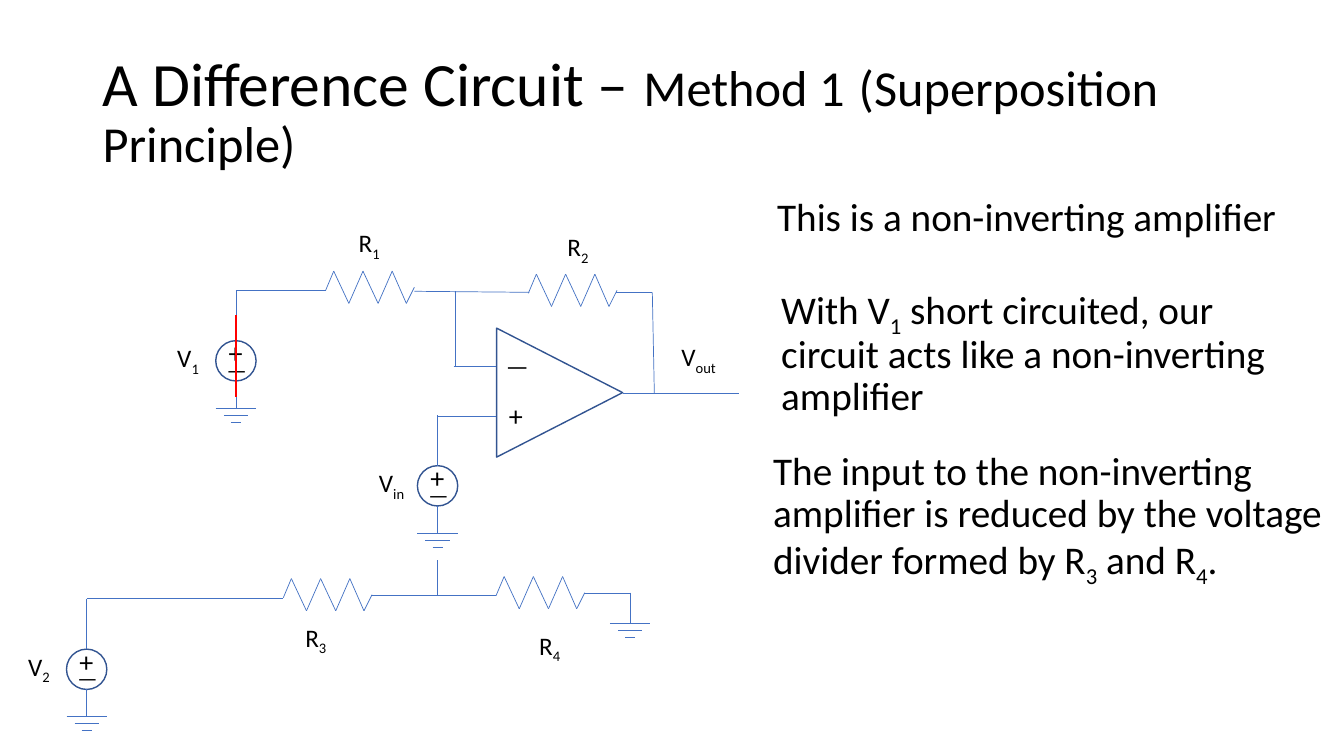
from itertools import pairwise

from lxml.etree import SubElement
from pptx import Presentation
from pptx.dml.color import RGBColor
from pptx.enum.shapes import MSO_CONNECTOR, MSO_SHAPE
from pptx.enum.text import MSO_ANCHOR, MSO_AUTO_SIZE, PP_ALIGN
from pptx.oxml.ns import qn
from pptx.util import Emu, Pt

PX = 9144  # 100 px to the inch
WIRE, OUTLINE, SHORT, INK = "4472C4", "325491", "FF0000", "000000"
ZIGZAG = [(0, 0), (8, -19), (23, 13), (37, -19), (52, 13), (66, -19), (80, 13), (88, -3)]
GROUND_BARS = [(0, 20), (7, 12), (14, 5)]  # drop, half width
BODY = {"line_spacing": 0.9, "space_before": Pt(10)}
LABEL = {"word_wrap": True, "auto_size": MSO_AUTO_SIZE.SHAPE_TO_FIT_TEXT}


def px(length):
    return Emu(length * PX)


def colour(code):
    return RGBColor.from_string(code)


def apply(target, values):
    for name, value in values.items():
        setattr(target, name, value)


# Text
def write(slide, box, runs, frame_format, paragraph_format=None):
    """Each run is (text, size) or (text, size, True) for a subscript."""
    frame = slide.shapes.add_textbox(*map(px, box)).text_frame
    apply(frame, frame_format)
    paragraph = frame.paragraphs[0]
    apply(paragraph, {"alignment": PP_ALIGN.LEFT, **(paragraph_format or {})})
    for text, size, *subscript in runs:
        run = paragraph.add_run()
        run.text = text
        apply(run.font, {"name": "Calibri", "size": Pt(size)})
        run.font.color.rgb = colour(INK)
        if subscript:
            run.font._element.set("baseline", "-25000")


def label(slide, x, y, letter, index):
    write(slide, (x, y, 57, 40), [(letter, 18), (index, 18, True)], LABEL)


def sign(slide, x, y, height, symbol, size):
    write(slide, (x, y, 34, height), [(symbol, size)], LABEL)


# Circuit parts
def wire(slide, *points, code=WIRE, width=0.5):
    for start, end in pairwise(points):
        segment = slide.shapes.add_connector(
            MSO_CONNECTOR.STRAIGHT, *map(px, start + end))
        segment.line.color.rgb = colour(code)
        segment.line.width = Pt(width)
        SubElement(segment._element.spPr, qn("a:effectLst"))


def outline(slide, kind, box, rotation=0):
    body = slide.shapes.add_shape(kind, *map(px, box))
    apply(body, {"rotation": rotation})
    body.shadow.inherit = False
    body.fill.background()
    body.line.color.rgb = colour(OUTLINE)
    body.line.width = Pt(1)


def resistor(slide, x, y, index, label_x, label_y):
    wire(slide, *[(x + dx, y + dy) for dx, dy in ZIGZAG])
    label(slide, label_x, label_y, "R", index)


def ground(slide, x, y, lead):
    wire(slide, (x, y - lead), (x, y))
    for drop, half in GROUND_BARS:
        wire(slide, (x - half, y + drop), (x + half, y + drop))


def voltage_source(slide, x, y, index):
    sign(slide, x - 17, y - 10, 44, "+", 20)
    sign(slide, x - 19, y + 10, 37, "—", 16)
    outline(slide, MSO_SHAPE.OVAL, (x - 20, y, 40, 40))
    wire(slide, (x, y), (x, y - 50))
    ground(slide, x, y + 67, 27)
    label(slide, x - 68, y - 3, "V", index)


def op_amp(slide):
    outline(slide, MSO_SHAPE.ISOSCELES_TRIANGLE, (491, 327, 128, 125), 90)
    sign(slide, 492, 343, 40, "—", 18)
    sign(slide, 495, 390, 44, "+", 20)
    label(slide, 666, 334, "V", "out")


def main():
    deck = Presentation()
    apply(deck, {"slide_width": px(1333), "slide_height": px(750)})
    slide = deck.slides.add_slide(deck.slide_layouts[6])

    # Title
    write(slide, (92, 40, 1150, 145),
          [("A Difference Circuit – ", 44), ("Method 1", 36), (" ", 44),
           ("(Superposition Principle)", 36)],
          {"word_wrap": True, "vertical_anchor": MSO_ANCHOR.MIDDLE},
          {"line_spacing": 0.9})

    # Amplifier with its feedback loop
    op_amp(slide)
    resistor(slide, 323, 288, "1", 346, 221)
    resistor(slide, 524, 291, "2", 553, 225)
    wire(slide, (234, 288), (323, 288))
    wire(slide, (411, 289), (525, 290))
    wire(slide, (452, 289), (452, 363))
    wire(slide, (450, 363), (492, 363))
    wire(slide, (434, 413), (492, 413))
    wire(slide, (618, 390), (733, 390))
    wire(slide, (611, 290), (647, 290), (649, 390))

    # Sources, with V1 shorted
    for x, y, index in [(214 + 20, 338, "1"), (434, 462, "in"), (86, 644, "2")]:
        voltage_source(slide, x, y, index)
    wire(slide, (234, 313), (234, 394), code=SHORT, width=1.75)

    # Voltage divider
    resistor(slide, 281, 593, "3", 293, 612)
    resistor(slide, 492, 591, "4", 525, 620)
    wire(slide, (86, 594), (281, 594))
    wire(slide, (368, 591), (492, 591))
    wire(slide, (434, 591), (434, 556))
    wire(slide, (579, 589), (625, 589))
    ground(slide, 625, 618, 30)

    # Explanation
    remarks = [
        ((761, 191, 594, 95), [("This is a non-inverting amplifier", 28)]),
        ((765, 279, 548, 146),
         [("With V", 28), ("1", 28, True),
          (" short circuited, our circuit acts like a non-inverting amplifier", 28)]),
        ((757, 443, 571, 187),
         [("The input to the non-inverting amplifier is reduced by the voltage "
           "divider formed by R", 28), ("3", 28, True), (" and R", 28),
          ("4", 28, True), (".", 28)]),
    ]
    for box, runs in remarks:
        write(slide, box, runs, {"word_wrap": True}, BODY)

    deck.save("out.pptx")


if __name__ == "__main__":
    main()
